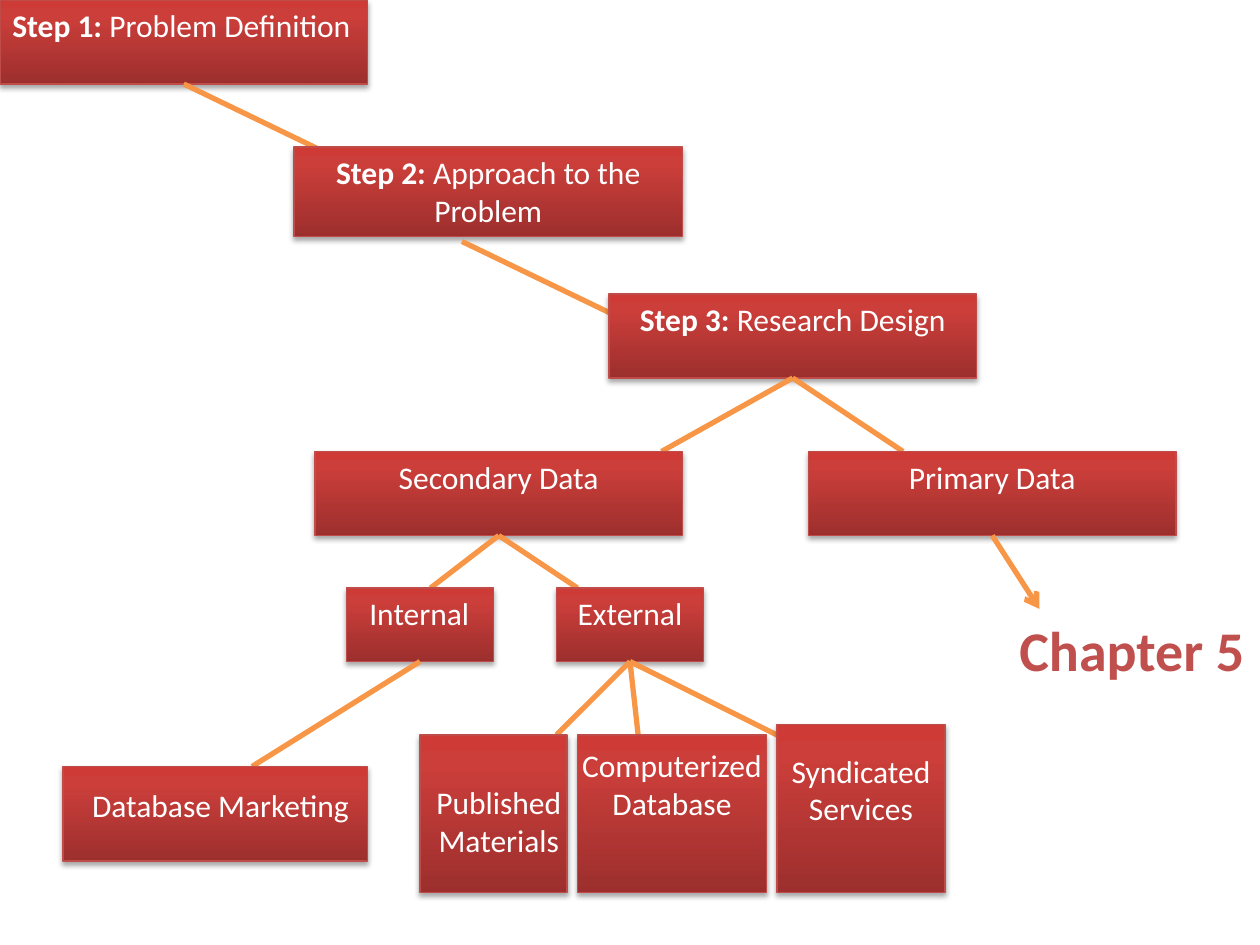
from dataclasses import dataclass

from lxml import etree
from pptx import Presentation
from pptx.dml.color import RGBColor
from pptx.enum.shapes import MSO_CONNECTOR, MSO_SHAPE
from pptx.enum.text import MSO_ANCHOR, MSO_AUTO_SIZE, PP_ALIGN
from pptx.oxml import parse_xml
from pptx.oxml.ns import nsdecls, qn
from pptx.util import Cm, Pt

RECT = MSO_SHAPE.RECTANGLE
STRAIGHT = MSO_CONNECTOR.STRAIGHT
TOP = MSO_ANCHOR.TOP
GROW = MSO_AUTO_SIZE.SHAPE_TO_FIT_TEXT
LEFT, CENTER = PP_ALIGN.LEFT, PP_ALIGN.CENTER

WHITE = RGBColor(0xFF, 0xFF, 0xFF)
RED = RGBColor(0xC0, 0x50, 0x4D)
BORDER = RGBColor(0xBF, 0x4C, 0x48)
ORANGE = RGBColor(0xF7, 0x96, 0x46)
GRADIENT = (
    (0, RGBColor(0x9C, 0x2F, 0x2D)),
    (80, RGBColor(0xCB, 0x3E, 0x3A)),
    (100, RGBColor(0xCE, 0x3B, 0x37)),
)

BOTTOM_SIDE = 2
UNITS_PER_INCH = 12
ONE_LINE, TWO_LINES = 4.8, 8.5


@dataclass
class Label:
    left: float
    top: float
    width: float
    height: float
    text: str
    lead: str = ""
    align: int = CENTER
    size: int = 18
    bold: bool = False
    color: RGBColor = WHITE
    wrap: bool = True


@dataclass
class Box:
    left: float
    top: float
    width: float
    height: float
    ends: tuple = ()
    start: tuple | None = None
    arrow: bool = False
    label: Label | None = None


BOXES = [
    Box(0, 0, 35, 8, ends=((32, 15),)),
    Box(28, 14, 37, TWO_LINES, ends=((58.5, 30),), start=(44, 23),
        label=Label(28, 14, 37, TWO_LINES, " Approach to the Problem", "Step 2:")),
    Box(58, 28, 35, 8, ends=((63, 43), (86, 43))),
    Box(30, 43, 35, 8, ends=((41, 56), (55, 56))),
    Box(77, 43, 35, 8, ends=((99, 58),), arrow=True),
    Box(33, 56, 14, 7, ends=((24, 73),)),
    Box(53, 56, 14, 7, ends=((53, 70), (61, 72), (74, 70))),
    Box(6, 73, 29, 9),
    Box(40, 70, 14, 15),
    Box(55, 70, 18, 15),
    Box(74, 69, 16, 16),
]

LABELS = [
    Label(0, 0, 37, ONE_LINE, " Problem Definition", "Step 1:", LEFT),
    Label(58, 28, 35, ONE_LINE, " Research Design", "Step 3:"),
    Label(30, 43, 35, ONE_LINE, "Secondary Data"),
    Label(77, 43, 35, ONE_LINE, "Primary Data"),
    Label(34, 56, 12, ONE_LINE, "Internal", align=LEFT),
    Label(53, 56, 14, ONE_LINE, "External"),
    Label(4, 74.25, 34, TWO_LINES, "Database Marketing"),
    Label(40, 74, 15, TWO_LINES, "Published Materials"),
    Label(54, 70.5, 20, TWO_LINES, "Computerized Database"),
    Label(74, 71, 16, TWO_LINES, "Syndicated Services"),
    Label(95.9, 58, 24.1, 7.7, "Chapter 5", align=LEFT, size=32,
          bold=True, color=RED, wrap=False),
]


def grid(*units: float) -> list:
    return [Cm(u * 2.54 / UNITS_PER_INCH) for u in units]


def write_label(sp, label: Label) -> None:
    tf = sp.text_frame
    for name, value in {"word_wrap": label.wrap, "auto_size": GROW,
                        "vertical_anchor": TOP}.items():
        setattr(tf, name, value)
    p = tf.paragraphs[0]
    p.alignment = label.align
    for text, bold in ((label.lead, True), (label.text, label.bold)):
        if text:
            r = p.add_run()
            r.text = text
            r.font.color.rgb = label.color
            for name, value in {"name": "Calibri", "size": Pt(label.size),
                                "bold": bold}.items():
                setattr(r.font, name, value)


def add_label(shapes, label: Label) -> None:
    sp = shapes.add_textbox(*grid(label.left, label.top, label.width, label.height))
    write_label(sp, label)


def add_box(shapes, box: Box):
    sp = shapes.add_shape(RECT, *grid(box.left, box.top, box.width, box.height))
    stops = "".join(
        f'<a:gs pos="{pos * 1000}"><a:srgbClr val="{color}"/></a:gs>'
        for pos, color in GRADIENT
    )
    geometry = sp.element.spPr.find(qn("a:prstGeom"))
    geometry.addnext(parse_xml(
        f'<a:gradFill {nsdecls("a")} rotWithShape="1"><a:gsLst>{stops}</a:gsLst>'
        '<a:lin ang="16200000" scaled="0"/></a:gradFill>'
    ))
    sp.line.color.rgb = BORDER
    sp.line.width = Pt(0.75)
    sp.shadow.inherit = False
    sp.element.spPr.find(qn("a:effectLst")).append(parse_xml(
        f'<a:outerShdw {nsdecls("a")} blurRad="{Pt(3.1)}" dist="{Pt(1.8)}" '
        'dir="5400000" rotWithShape="0"><a:srgbClr val="000000">'
        '<a:alpha val="35000"/></a:srgbClr></a:outerShdw>'
    ))
    if box.label:
        write_label(sp, box.label)
    return sp


def add_branch(shapes, box: Box, sp, end: tuple) -> None:
    start = box.start or (box.left + box.width / 2, box.top + box.height)
    line = shapes.add_connector(STRAIGHT, *grid(*start, *end))
    if box.start is None:
        line.begin_connect(sp, BOTTOM_SIDE)
    line.line.color.rgb = ORANGE
    line.line.width = Pt(3)
    if box.arrow:
        etree.SubElement(line.line._get_or_add_ln(), qn("a:tailEnd"), type="arrow")
    etree.SubElement(line.element.spPr, qn("a:effectLst"))


def main() -> None:
    prs = Presentation()
    prs.slide_width, prs.slide_height = Cm(25.4), Cm(19.05)
    s = prs.slides.add_slide(prs.slide_layouts[6])
    for box in BOXES:
        sp = add_box(s.shapes, box)
        for end in box.ends:
            add_branch(s.shapes, box, sp, end)
    for label in LABELS:
        add_label(s.shapes, label)
    prs.save("out.pptx")


if __name__ == "__main__":
    main()
